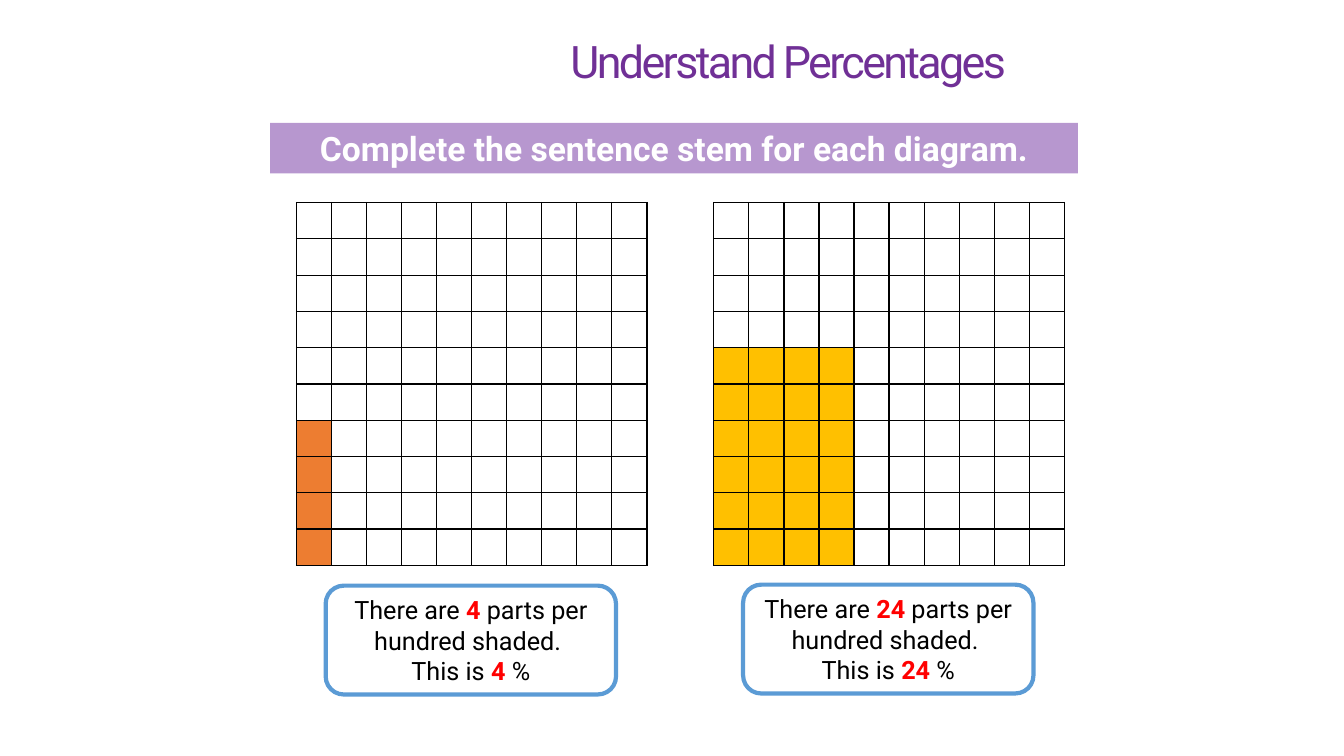
import lxml.etree
import pptx
import pptx.dml.color
import pptx.enum.shapes
import pptx.enum.text
import pptx.oxml.ns
import pptx.util

TITLE = "Understand Percentages"
INSTRUCTION = "Complete the sentence stem for each diagram."
DIAGRAMS = [
    {"left": 294, "box_top": 581, "rows": 4, "columns": 1, "color": "ED7D31"},
    {"left": 708, "box_top": 580, "rows": 6, "columns": 4, "color": "FFC000"},
]
SENTENCES = [("There are ", " parts per hundred shaded. "), ("This is ", " %")]


class Theme:
    font = "Roboto"
    title = "703096"
    banner = "7030A0"
    banner_opacity = 50
    white = "FFFFFF"
    black = "000000"
    answer = "FF0000"
    outline = "5B9BD5"
    title_size = 32
    banner_size = 24
    body_size = 18
    cell_size = 8


PX = 9144
GRID_COUNT = 10
GRID_TOP, GRID_WIDTH, GRID_HEIGHT = 201, 348, 360
BOX_OFFSET, BOX_WIDTH, BOX_HEIGHT = 29, 288, 108


def px(*lengths):
    return [round(length * PX) for length in lengths]


def rgb(color):
    return pptx.dml.color.RGBColor.from_string(color)


def add_xml(parent, tag, **attributes):
    element = lxml.etree.SubElement(parent, pptx.oxml.ns.qn(tag))
    for name, value in attributes.items():
        element.set(name, str(value))
    return element


def paint(target, color):
    target.fill.solid()
    target.fill.fore_color.rgb = rgb(color)


def add_run(paragraph, text, size, color, bold=False):
    run = paragraph.add_run()
    run.text = text
    run.font.name = Theme.font
    run.font.size = pptx.util.Pt(size)
    run.font.color.rgb = rgb(color)
    run.font.bold = bold
    return run


def add_panel(slide, kind, bounds, color):
    shape = slide.shapes.add_shape(kind, *px(*bounds))
    shape.shadow.inherit = False
    paint(shape, color)
    shape.text_frame.word_wrap = True
    return shape


def add_title(slide):
    frame = slide.shapes.add_textbox(*px(556, 29, 457, 64)).text_frame
    frame.word_wrap = False
    frame.auto_size = pptx.enum.text.MSO_AUTO_SIZE.SHAPE_TO_FIT_TEXT
    run = add_run(frame.paragraphs[0], TITLE, Theme.title_size, Theme.title)
    run.font._element.set("spc", "-190")


def add_banner(slide):
    rectangle = pptx.enum.shapes.MSO_SHAPE.RECTANGLE
    shape = add_panel(slide, rectangle, (268, 122, 801, 50), Theme.banner)
    shape.line.fill.background()
    color = shape.fill._xPr.find(".//" + pptx.oxml.ns.qn("a:srgbClr"))
    add_xml(color, "a:alpha", val=Theme.banner_opacity * 1000)
    frame = shape.text_frame
    frame.auto_size = pptx.enum.text.MSO_AUTO_SIZE.SHAPE_TO_FIT_TEXT
    frame.vertical_anchor = pptx.enum.text.MSO_ANCHOR.TOP
    paragraph = frame.paragraphs[0]
    paragraph.alignment = pptx.enum.text.PP_ALIGN.CENTER
    paragraph.line_spacing = pptx.util.Pt(28.8)
    paragraph.space_before = pptx.util.Pt(1)
    add_run(paragraph, INSTRUCTION, Theme.banner_size, Theme.white, True)


def format_cell(cell, color):
    cell.margin_left = cell.margin_right = 0
    cell.margin_top = cell.margin_bottom = 0
    add_xml(cell.text_frame.paragraphs[0]._p, "a:endParaRPr", sz=Theme.cell_size * 100)
    properties = cell._tc.get_or_add_tcPr()
    for side in ("a:lnL", "a:lnR", "a:lnT", "a:lnB"):
        border = add_xml(properties, side, w=pptx.util.Pt(1))
        add_xml(add_xml(border, "a:solidFill"), "a:srgbClr", val=Theme.black)
    paint(cell, color)


def add_grid(slide, diagram):
    bounds = px(diagram["left"], GRID_TOP, GRID_WIDTH, GRID_HEIGHT)
    table = slide.shapes.add_table(GRID_COUNT, GRID_COUNT, *bounds).table
    table.first_row = table.horz_banding = False
    first_shaded_row = GRID_COUNT - diagram["rows"]
    for row in range(GRID_COUNT):
        for column in range(GRID_COUNT):
            shaded = row >= first_shaded_row and column < diagram["columns"]
            color = diagram["color"] if shaded else Theme.white
            format_cell(table.cell(row, column), color)


def add_sentences(slide, diagram):
    rounded = pptx.enum.shapes.MSO_SHAPE.ROUNDED_RECTANGLE
    bounds = (diagram["left"] + BOX_OFFSET, diagram["box_top"], BOX_WIDTH, BOX_HEIGHT)
    shape = add_panel(slide, rounded, bounds, Theme.white)
    shape.line.color.rgb = rgb(Theme.outline)
    shape.line.width = pptx.util.Pt(3)
    frame = shape.text_frame
    frame.vertical_anchor = pptx.enum.text.MSO_ANCHOR.MIDDLE
    answer = str(diagram["rows"] * diagram["columns"])
    for index, (before, after) in enumerate(SENTENCES):
        paragraph = frame.add_paragraph() if index else frame.paragraphs[0]
        paragraph.alignment = pptx.enum.text.PP_ALIGN.CENTER
        add_run(paragraph, before, Theme.body_size, Theme.black)
        add_run(paragraph, answer, Theme.body_size, Theme.answer, True)
        add_run(paragraph, after, Theme.body_size, Theme.black)


def main():
    presentation = pptx.Presentation()
    presentation.slide_width, presentation.slide_height = px(1333, 750)
    slide = presentation.slides.add_slide(presentation.slide_layouts[6])
    add_title(slide)
    for diagram in DIAGRAMS:
        add_grid(slide, diagram)
    add_banner(slide)
    for diagram in DIAGRAMS:
        add_sentences(slide, diagram)
    presentation.save("out.pptx")


if __name__ == "__main__":
    main()
